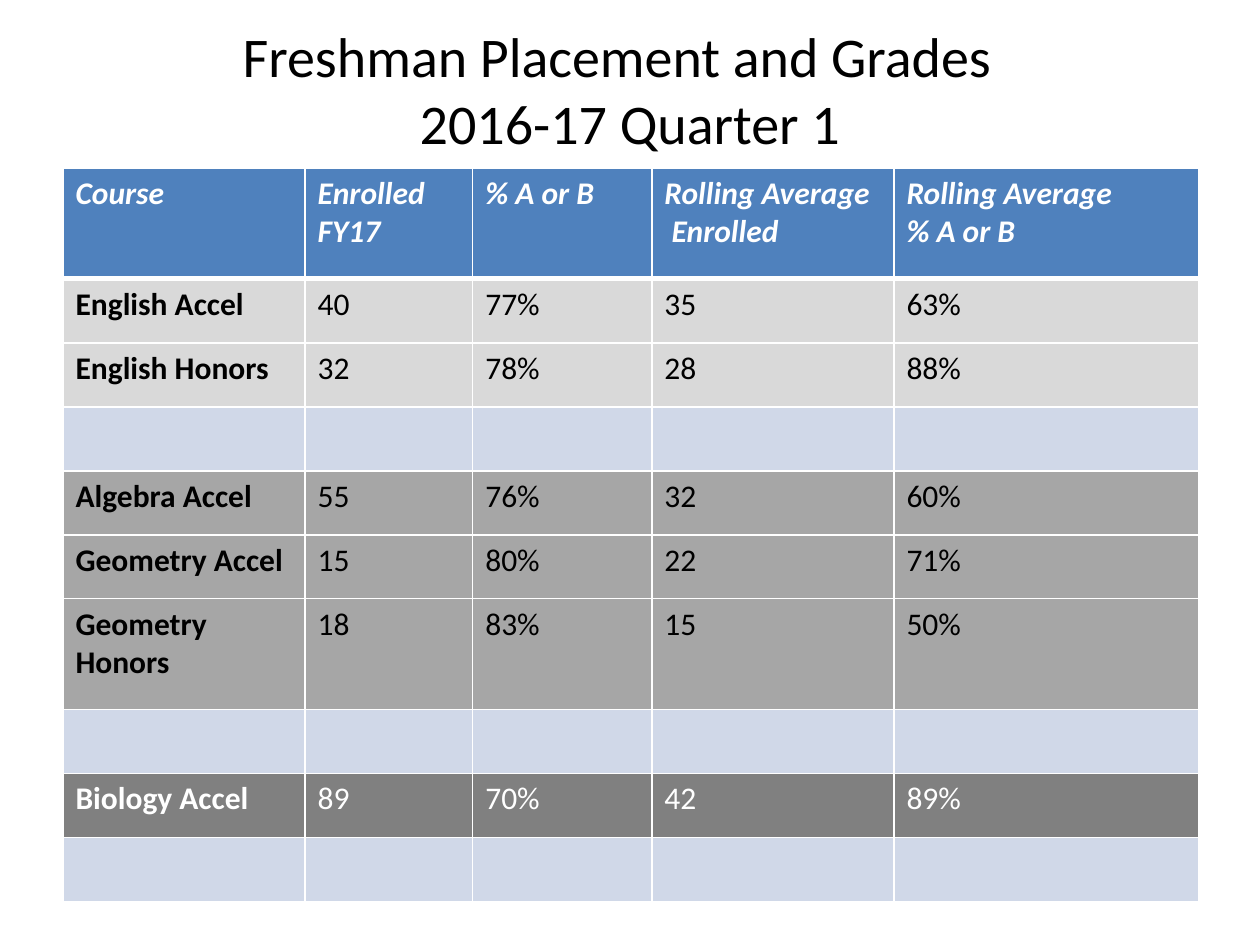
from lxml.etree import SubElement
from pptx import Presentation
from pptx.dml.color import RGBColor
from pptx.enum.text import MSO_ANCHOR, PP_ALIGN
from pptx.oxml.ns import qn
from pptx.util import Cm, Pt

FONT = "Calibri"
COLORS = {
    "black": "000000",
    "white": "FFFFFF",
    "header": "4F81BD",
    "english": "D9D9D9",
    "math": "A6A6A6",
    "science": "808080",
    "spacer": "D0D8E8",
}
COLUMN_WIDTHS = [4.88, 3.38, 3.61, 4.88, 6.15]
ROW_HEIGHT, TALL_ROW_HEIGHT = 1.29, 2.23
TALL_ROWS = (0, 6)

# Each row: group (its fill), then the cell texts
BLANK_ROW = ("spacer", [""] * len(COLUMN_WIDTHS))
ROWS = [
    ("header", ["Course", "Enrolled\nFY17", "% A or B",
                "Rolling Average\n Enrolled", "Rolling Average\n% A or B"]),
    ("english", ["English Accel", "40", "77%", "35", "63%"]),
    ("english", ["English Honors", "32", "78%", "28", "88%"]),
    BLANK_ROW,
    ("math", ["Algebra Accel", "55", "76%", "32", "60%"]),
    ("math", ["Geometry Accel", "15", "80%", "22", "71%"]),
    ("math", ["Geometry Honors", "18", "83%", "15", "50%"]),
    BLANK_ROW,
    ("science", ["Biology Accel", "89", "70%", "42", "89%"]),
    BLANK_ROW,
]


def color(name):
    return RGBColor.from_string(COLORS[name])


def format_font(font, size, color_name, bold=False, italic=False):
    font.name, font.size = FONT, Pt(size)
    font.bold, font.italic = bold, italic
    font.color.rgb = color(color_name)


def set_borders(cell, top=1, bottom=1):
    """Draw white cell borders; widths are in points."""
    properties = cell._tc.get_or_add_tcPr()
    for side, width in (("L", 1), ("R", 1), ("T", top), ("B", bottom)):
        line = SubElement(properties, qn(f"a:ln{side}"), w=str(Pt(width)))
        fill = SubElement(line, qn("a:solidFill"))
        SubElement(fill, qn("a:srgbClr"), val=COLORS["white"])


def add_title(slide, left, top, width, height):
    title = slide.shapes.title
    title.left, title.top = Cm(left), Cm(top)
    title.width, title.height = Cm(width), Cm(height)
    frame = title.text_frame
    frame.text = "Freshman Placement and Grades  \v2016-17 Quarter 1"
    frame.vertical_anchor = MSO_ANCHOR.MIDDLE
    paragraph = frame.paragraphs[0]
    paragraph.alignment = PP_ALIGN.CENTER
    format_font(paragraph.font, 32, "black")


def add_grades_table(slide, left, top):
    heights = [TALL_ROW_HEIGHT if index in TALL_ROWS else ROW_HEIGHT
               for index in range(len(ROWS))]
    table = slide.shapes.add_table(
        len(ROWS), len(COLUMN_WIDTHS), Cm(left), Cm(top),
        Cm(sum(COLUMN_WIDTHS)), Cm(sum(heights))).table
    for column, width in zip(table.columns, COLUMN_WIDTHS):
        column.width = Cm(width)

    for row_index, (group, texts) in enumerate(ROWS):
        table.rows[row_index].height = Cm(heights[row_index])
        is_header = group == "header"
        text_color = "white" if group in ("header", "science") else "black"
        for column_index, text in enumerate(texts):
            cell = table.cell(row_index, column_index)
            # A thicker rule separates the header from the first row
            set_borders(cell, top=3 if row_index == 1 else 1,
                        bottom=3 if is_header else 1)
            cell.fill.solid()
            cell.fill.fore_color.rgb = color(group)
            cell.text = text
            for paragraph in cell.text_frame.paragraphs:
                format_font(paragraph.font, 18, text_color,
                            bold=is_header or column_index == 0,
                            italic=is_header)


def main():
    presentation = Presentation()
    presentation.slide_width, presentation.slide_height = Cm(25.4), Cm(19.05)
    slide = presentation.slides.add_slide(presentation.slide_layouts[5])
    add_title(slide, 1.27, 0.2, 22.86, 3.18)
    add_grades_table(slide, 1.27, 3.39)
    presentation.save("out.pptx")


if __name__ == "__main__":
    main()
